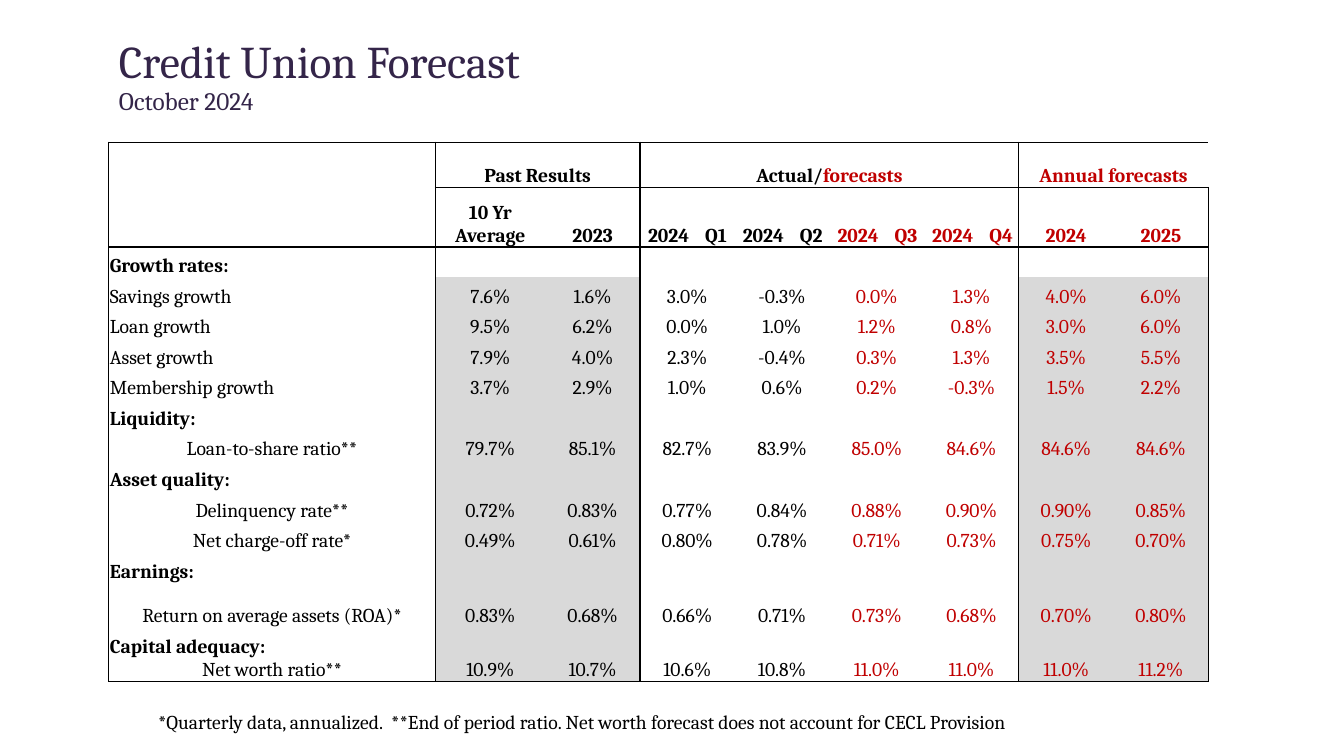
from dataclasses import dataclass

import lxml.etree
import pptx
import pptx.dml.color
import pptx.enum.text
import pptx.oxml.ns
import pptx.util

PX = 3048  # EMU per px, 300 px to the inch
ALIGN = pptx.enum.text.PP_ALIGN
ANCHOR = pptx.enum.text.MSO_ANCHOR
qn = pptx.oxml.ns.qn


@dataclass(frozen=True)
class Theme:
    font: str = "Cambria"
    title: str = "342549"
    ink: str = "000000"
    forecast: str = "C00000"
    shade: str = "D9D9D9"
    title_pt: float = 32.4
    subtitle_pt: float = 18
    body_pt: float = 14
    rule_pt: float = 1


@dataclass(frozen=True)
class Row:
    label: str
    values: tuple[str, ...] = ()
    height: int = 91

    @property
    def is_section(self) -> bool:
        return not self.values

    @property
    def align(self) -> ALIGN:
        return ALIGN.CENTER if self.label.endswith("*") else ALIGN.LEFT


@dataclass(frozen=True)
class Group:
    first: int
    last: int
    heading: tuple[tuple[str, str], ...]


T = Theme()

# Table content
GROUPS = (
    Group(1, 2, (("Past Results", T.ink),)),
    Group(3, 6, (("Actual/", T.ink), ("forecasts", T.forecast))),
    Group(7, 8, (("Annual forecasts", T.forecast),)),
)
PERIODS = ("10 Yr Average", "2023", "2024\tQ1", "2024\tQ2", "2024\tQ3", "2024\tQ4", "2024", "2025")
ROWS = (
    Row("Growth rates:"),
    Row("Savings growth", ("7.6%", "1.6%", "3.0%", "-0.3%", "0.0%", "1.3%", "4.0%", "6.0%")),
    Row("Loan growth", ("9.5%", "6.2%", "0.0%", "1.0%", "1.2%", "0.8%", "3.0%", "6.0%")),
    Row("Asset growth", ("7.9%", "4.0%", "2.3%", "-0.4%", "0.3%", "1.3%", "3.5%", "5.5%")),
    Row("Membership growth", ("3.7%", "2.9%", "1.0%", "0.6%", "0.2%", "-0.3%", "1.5%", "2.2%")),
    Row("Liquidity:"),
    Row("Loan-to-share ratio**",
        ("79.7%", "85.1%", "82.7%", "83.9%", "85.0%", "84.6%", "84.6%", "84.6%")),
    Row("Asset quality:"),
    Row("Delinquency rate**",
        ("0.72%", "0.83%", "0.77%", "0.84%", "0.88%", "0.90%", "0.90%", "0.85%")),
    Row("Net charge-off rate*",
        ("0.49%", "0.61%", "0.80%", "0.78%", "0.71%", "0.73%", "0.75%", "0.70%")),
    Row("Earnings:"),
    Row("Return on average assets (ROA)*",
        ("0.83%", "0.68%", "0.66%", "0.71%", "0.73%", "0.68%", "0.70%", "0.80%"), 132),
    Row("Capital adequacy:"),
    Row("Net worth ratio**",
        ("10.9%", "10.7%", "10.6%", "10.8%", "11.0%", "11.0%", "11.0%", "11.2%"), 69),
)
COL_WIDTHS = (972, 327) + (282,) * 7
ROW_HEIGHTS = (135, 177) + tuple(row.height for row in ROWS)
FIRST_FORECAST = 5
LAST_ROW = len(ROW_HEIGHTS) - 1
SHADED_COLS = {1, 2, 7, 8}


def px(n: int) -> pptx.util.Emu:
    return pptx.util.Emu(n * PX)


def rgb(color: str) -> pptx.dml.color.RGBColor:
    return pptx.dml.color.RGBColor.from_string(color)


def add_text(p, text: str, *, size: float = T.body_pt, color: str = T.ink,
             bold: bool = False, align: ALIGN = ALIGN.LEFT) -> None:
    p.alignment = align
    r = p.add_run()
    r.text = text
    r.font.name = T.font
    r.font.size = pptx.util.Pt(size)
    r.font.bold = bold
    r.font.color.rgb = rgb(color)


def place(sp, left: int, top: int, width: int, height: int) -> None:
    sp.left, sp.top, sp.width, sp.height = px(left), px(top), px(width), px(height)


def add_tab(p, position: int) -> None:
    tabs = lxml.etree.SubElement(p._p.get_or_add_pPr(), qn("a:tabLst"))
    lxml.etree.SubElement(tabs, qn("a:tab"), pos=str(px(position)), algn="l")


def draw_borders(cell, row: int, col: int) -> None:
    corner = col == 0  # the two header rows are one cell here
    edges = {
        "a:lnL": col in (0, 1, 3, 7),
        "a:lnR": col in (0, 2, 6, 8),
        "a:lnT": row in (0, 2) or (row == 1 and not corner),
        "a:lnB": row in (1, LAST_ROW) or (row == 0 and not corner),
    }
    tc_pr = cell._tc.get_or_add_tcPr()
    for tag, shown in edges.items():
        ln = lxml.etree.SubElement(tc_pr, qn(tag), w=str(pptx.util.Pt(T.rule_pt)))
        if shown:
            fill = lxml.etree.SubElement(ln, qn("a:solidFill"))
            lxml.etree.SubElement(fill, qn("a:srgbClr"), val=T.ink)
        else:
            lxml.etree.SubElement(ln, qn("a:noFill"))


def format_cell(cell, row: int, col: int) -> None:
    cell.margin_left = cell.margin_top = cell.margin_right = px(3)
    cell.margin_bottom = 0
    cell.vertical_anchor = ANCHOR.BOTTOM
    draw_borders(cell, row, col)
    if row > 2 and col in SHADED_COLS:
        cell.fill.solid()
        cell.fill.fore_color.rgb = rgb(T.shade)
    else:
        cell.fill.background()
    if not cell.text_frame.text:
        p = cell.text_frame.paragraphs[0]
        lxml.etree.SubElement(p._p, qn("a:endParaRPr"), sz=str(T.body_pt * 100))


def column_color(col: int) -> str:
    return T.forecast if col >= FIRST_FORECAST else T.ink


def add_forecast_table(slide) -> None:
    table = slide.shapes.add_table(len(ROW_HEIGHTS), len(COL_WIDTHS), px(324), px(423),
                                   px(sum(COL_WIDTHS)), px(sum(ROW_HEIGHTS))).table
    table.first_row = table.horz_banding = False
    for column, width in zip(table.columns, COL_WIDTHS):
        column.width = px(width)
    for table_row, height in zip(table.rows, ROW_HEIGHTS):
        table_row.height = px(height)

    # Header rows
    table.cell(0, 0).merge(table.cell(1, 0))
    for group in GROUPS:
        head = table.cell(0, group.first)
        head.merge(table.cell(0, group.last))
        for text, color in group.heading:
            add_text(head.text_frame.paragraphs[0], text, color=color, bold=True,
                     align=ALIGN.CENTER)
    for col, period in enumerate(PERIODS, 1):
        p = table.cell(1, col).text_frame.paragraphs[0]
        quarterly = "\t" in period
        add_text(p, period, color=column_color(col), bold=True,
                 align=ALIGN.LEFT if quarterly else ALIGN.CENTER)
        if quarterly:
            add_tab(p, 170)

    # Body rows
    for i, row in enumerate(ROWS, 2):
        add_text(table.cell(i, 0).text_frame.paragraphs[0], row.label,
                 bold=row.is_section, align=row.align)
        for col, value in enumerate(row.values, 1):
            add_text(table.cell(i, col).text_frame.paragraphs[0], value,
                     color=column_color(col), align=ALIGN.CENTER)

    for i in range(len(ROW_HEIGHTS)):
        for col in range(len(COL_WIDTHS)):
            cell = table.cell(i, col)
            format_cell(cell, i, col)
            if "\t" in cell.text_frame.text:
                cell.margin_left = px(24)


def main() -> None:
    prs = pptx.Presentation()
    prs.slide_width, prs.slide_height = px(4000), px(2250)
    slide = prs.slides.add_slide(prs.slide_layouts[0])
    subtitle = slide.placeholders[1]
    subtitle._element.getparent().remove(subtitle._element)

    # Title
    title = slide.shapes.title
    place(title, 324, 111, 3276, 240)
    tf = title.text_frame
    tf.auto_size = pptx.enum.text.MSO_AUTO_SIZE.NONE
    tf.vertical_anchor = ANCHOR.MIDDLE
    p = tf.paragraphs[0]
    p.line_spacing = 0.9
    add_text(p, "Credit Union Forecast", size=T.title_pt, color=T.title)
    p.add_line_break()
    add_text(p, "October 2024", size=T.subtitle_pt, color=T.title)

    add_forecast_table(slide)

    # Footnote
    note = slide.shapes.add_textbox(px(441), px(2097), px(3057), px(102))
    note.text_frame.word_wrap = True
    add_text(note.text_frame.paragraphs[0],
             "*Quarterly data, annualized.  **End of period ratio. "
             "Net worth forecast does not account for CECL Provision")

    prs.save("out.pptx")


if __name__ == "__main__":
    main()
